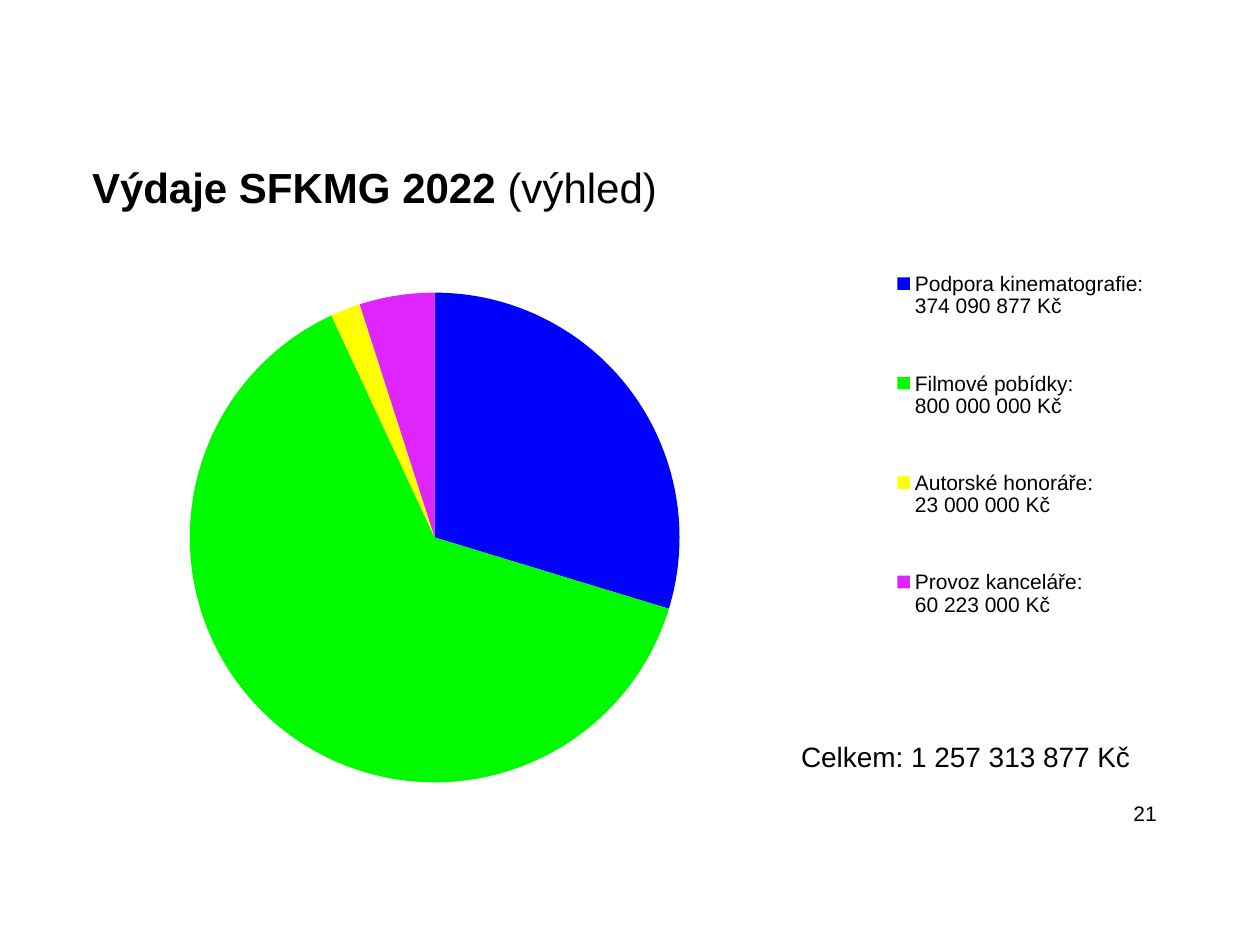
"""Build the slide with the 2022 expenditure pie chart."""
from dataclasses import dataclass

import lxml.etree
import pptx
import pptx.chart.chart
import pptx.chart.data
import pptx.dml.color
import pptx.enum.chart
import pptx.enum.text
import pptx.oxml.ns
import pptx.slide
import pptx.text.text
import pptx.util

BLACK = pptx.dml.color.RGBColor(0x00, 0x00, 0x00)
BLUE = pptx.dml.color.RGBColor(0x00, 0x00, 0xFF)
GREEN = pptx.dml.color.RGBColor(0x00, 0xFA, 0x00)
YELLOW = pptx.dml.color.RGBColor(0xFF, 0xFF, 0x00)
MAGENTA = pptx.dml.color.RGBColor(0xDF, 0x25, 0xFE)


@dataclass(frozen=True)
class Expense:
    label: str
    amount: str
    share: int
    color: pptx.dml.color.RGBColor


@dataclass(frozen=True)
class Label:
    text: str
    left: float
    top: float
    width: float
    height: float
    size: int
    align: pptx.enum.text.PP_ALIGN
    wrap: bool


EXPENSES = (
    Expense("Podpora kinematografie:", "374 090 877 Kč", 30, BLUE),
    Expense("Filmové pobídky:", "800 000 000 Kč", 64, GREEN),
    Expense("Autorské honoráře:", "23 000 000 Kč", 2, YELLOW),
    Expense("Provoz kanceláře:", "60 223 000 Kč", 5, MAGENTA),
)
LABELS = (
    Label("21", 17.65, 15.88, 5.92, 1.02, 12, pptx.enum.text.PP_ALIGN.RIGHT, True),
    Label("Celkem: 1\u00a0257 313 877 Kč", 15.9, 14.78, 7.24, 0.94, 16,
          pptx.enum.text.PP_ALIGN.LEFT, False),
)
TITLE_SPANS = (("Výdaje SFKMG 2022", True), (" (výhled)", False))
LAYOUTS = {
    "c:chart/c:title/c:overlay": {"x": 0.07, "y": 0.07},
    "c:chart/c:plotArea/c:pieChart": {"x": 0.14, "y": 0.25, "w": 0.41, "h": 0.66},
    "c:chart/c:legend/c:overlay": {"x": 0.7, "y": 0.15, "w": 0.22, "h": 0.61},
}


def style_font(font: pptx.text.text.Font, size: int, bold: bool = False) -> None:
    """Apply the common typeface and colour."""
    values = {"name": "Arial", "size": pptx.util.Pt(size), "bold": bold}
    for name, value in values.items():
        setattr(font, name, value)
    font.color.rgb = BLACK


def draw_label(page: pptx.slide.Slide, label: Label) -> None:
    """Draw one line of text."""
    box = page.shapes.add_textbox(
        *map(pptx.util.Cm, (label.left, label.top, label.width, label.height)))
    frame = box.text_frame
    frame.word_wrap = label.wrap
    frame.vertical_anchor = pptx.enum.text.MSO_ANCHOR.MIDDLE
    para = frame.paragraphs[0]
    para.alignment = label.align
    span = para.add_run()
    span.text = label.text
    style_font(span.font, label.size)


def place_part(chart: pptx.chart.chart.Chart, follower: str, values: dict[str, float]) -> None:
    """Give a chart part a manual layout just before the named element."""
    tag = pptx.oxml.ns.qn
    anchor = chart.element.xpath(follower)[0]
    parent = anchor.getparent()
    for old in parent.findall(tag("c:layout")):
        parent.remove(old)
    layout = lxml.etree.Element(tag("c:layout"))
    manual = lxml.etree.SubElement(layout, tag("c:manualLayout"))
    settings = {"xMode": "edge", "yMode": "edge", **values}
    if "pieChart" in follower:
        settings = {"layoutTarget": "inner", **settings}
    for name, value in settings.items():
        lxml.etree.SubElement(manual, tag(f"c:{name}"), val=str(value))
    anchor.addprevious(layout)


def draw_chart(page: pptx.slide.Slide) -> None:
    """Draw the pie with its title and legend."""
    data = pptx.chart.data.CategoryChartData()
    data.categories = [f"{item.label}\n{item.amount}" for item in EXPENSES]
    data.add_series("Series 1", [item.share for item in EXPENSES])
    chart = page.shapes.add_chart(
        pptx.enum.chart.XL_CHART_TYPE.PIE,
        *map(pptx.util.Cm, (0, 2.16, 25.4, 14.96)), data).chart
    style_font(chart.font, 10)
    chart.has_title = True
    para = chart.chart_title.text_frame.paragraphs[0]
    for text, bold in TITLE_SPANS:
        span = para.add_run()
        span.text = text
        style_font(span.font, 24, bold)
    chart.has_legend = True
    chart.legend.position = pptx.enum.chart.XL_LEGEND_POSITION.BOTTOM
    chart.legend.include_in_layout = False
    style_font(chart.legend.font, 12)
    plot = chart.plots[0]
    plot.vary_by_categories = True
    for index, item in enumerate(EXPENSES):
        point = plot.series[0].points[index]
        point.format.fill.solid()
        point.format.fill.fore_color.rgb = item.color
        point.format.line.fill.background()
    for follower, values in LAYOUTS.items():
        place_part(chart, follower, values)


def main() -> None:
    """Build and save the deck."""
    deck = pptx.Presentation()
    deck.slide_width, deck.slide_height = pptx.util.Cm(25.4), pptx.util.Cm(19.05)
    page = deck.slides.add_slide(deck.slide_layouts[6])
    draw_chart(page)
    for label in LABELS:
        draw_label(page, label)
    deck.save("out.pptx")


if __name__ == "__main__":
    main()
